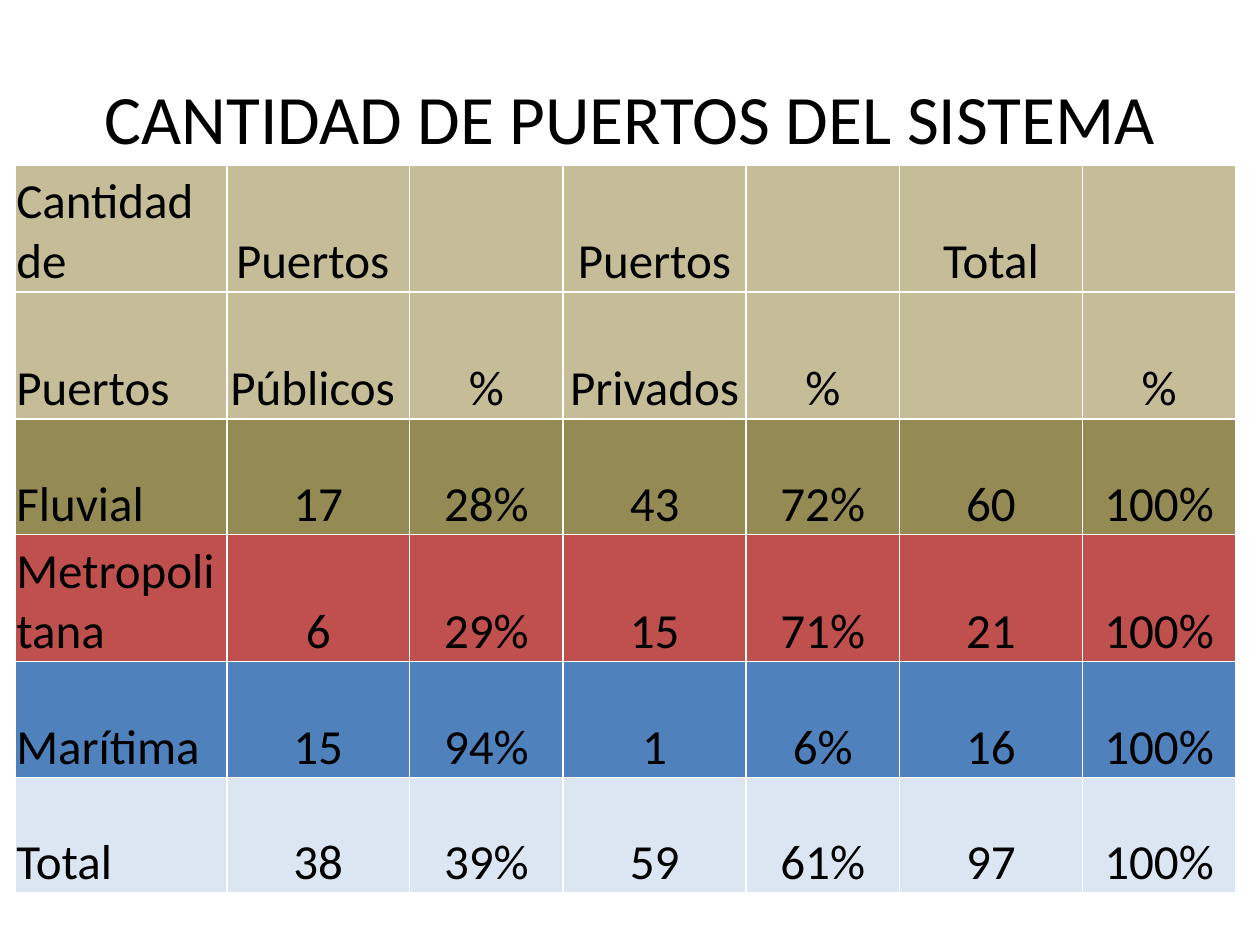
from dataclasses import dataclass

from lxml import etree
from pptx import Presentation
from pptx.dml.color import RGBColor
from pptx.enum import text
from pptx.oxml import ns
from pptx.util import Inches, Pt


@dataclass(frozen=True)
class Theme:
    """Colours, font and type sizes of the slide."""
    font: str = "Calibri"
    ink: str = "000000"
    border: str = "FFFFFF"
    header: str = "C4BD97"
    fluvial: str = "948A54"
    metropolitan: str = "C0504D"
    maritime: str = "4F81BD"
    total: str = "DCE6F2"
    title_size: float = 39.6
    table_size: float = 28


THEME = Theme()
COLUMNS = [1.68] + [1.45, 1.22] * 3
ROWS = [
    (1.01, THEME.header, ["Cantidad de", "Puertos ", "", "Puertos", "", "Total", ""]),
    (1.01, THEME.header, ["Puertos", "Públicos ", "%", "Privados", "%", "", "%"]),
    (0.92, THEME.fluvial, ["Fluvial", "17", "28%", "43", "72%", "60", "100%"]),
    (1.01, THEME.metropolitan, ["Metropolitana", "6", "29%", "15", "71%", "21", "100%"]),
    (0.92, THEME.maritime, ["Marítima", "15", "94%", "1", "6%", "16", "100%"]),
    (0.92, THEME.total, ["Total", "38", "39%", "59", "61%", "97", "100%"]),
]


def write(tf, content, size, align=text.PP_ALIGN.CENTER):
    """Put one formatted paragraph in a text frame."""
    p = tf.paragraphs[0]
    p.alignment = align
    r = p.add_run()
    r.text = content
    r.font.name = THEME.font
    r.font.size = Pt(size)
    r.font.bold = False
    r.font.color.rgb = RGBColor.from_string(THEME.ink)


def set_borders(cell, color, width):
    """Draw a solid line on all four sides of a cell."""
    tcPr = cell._tc.get_or_add_tcPr()
    for i, side in enumerate(("lnL", "lnR", "lnT", "lnB")):
        ln = etree.Element(ns.qn(f"a:{side}"), w=str(Pt(width)))
        fill = etree.SubElement(ln, ns.qn("a:solidFill"))
        etree.SubElement(fill, ns.qn("a:srgbClr"), val=color)
        tcPr.insert(i, ln)


def add_title(slide, left, top, width, height):
    """Place the centred slide title in the given box."""
    sp = slide.shapes.add_textbox(left, top, width, height)
    tf = sp.text_frame
    tf.word_wrap = True
    tf.vertical_anchor = text.MSO_ANCHOR.MIDDLE
    write(tf, "CANTIDAD DE PUERTOS DEL SISTEMA", THEME.title_size)


def format_cell(cell, content, color, align):
    """Fill, border and write one table cell."""
    cell.fill.solid()
    cell.fill.fore_color.rgb = RGBColor.from_string(color)
    set_borders(cell, THEME.border, 1)
    cell.margin_left = cell.margin_right = cell.margin_top = Inches(0.01)
    cell.margin_bottom = 0
    cell.vertical_anchor = text.MSO_ANCHOR.BOTTOM
    if content:
        write(cell.text_frame, content, THEME.table_size, align)


def add_ports_table(slide, left, top, width, height):
    """Place the table of ports, scaled to the given box."""
    table = slide.shapes.add_table(len(ROWS), len(COLUMNS), left, top, width, height).table
    table.first_row = table.horz_banding = False
    for column, share in zip(table.columns, COLUMNS):
        column.width = int(width * share / sum(COLUMNS))
    total_height = sum(row_height for row_height, _, _ in ROWS)
    for i, (row_height, color, values) in enumerate(ROWS):
        table.rows[i].height = int(height * row_height / total_height)
        for j, value in enumerate(values):
            align = text.PP_ALIGN.CENTER if j else text.PP_ALIGN.LEFT
            format_cell(table.cell(i, j), value, color, align)


def main():
    """Build and save the slide."""
    prs = Presentation()
    prs.slide_width, prs.slide_height = Inches(10), Inches(7.5)
    s = prs.slides.add_slide(prs.slide_layouts[6])
    add_title(s, Inches(0.5), Inches(0.3), Inches(9), Inches(1.25))
    add_ports_table(s, Inches(0.12), Inches(1.31), Inches(9.69), Inches(5.78))
    prs.save("out.pptx")


if __name__ == "__main__":
    main()
